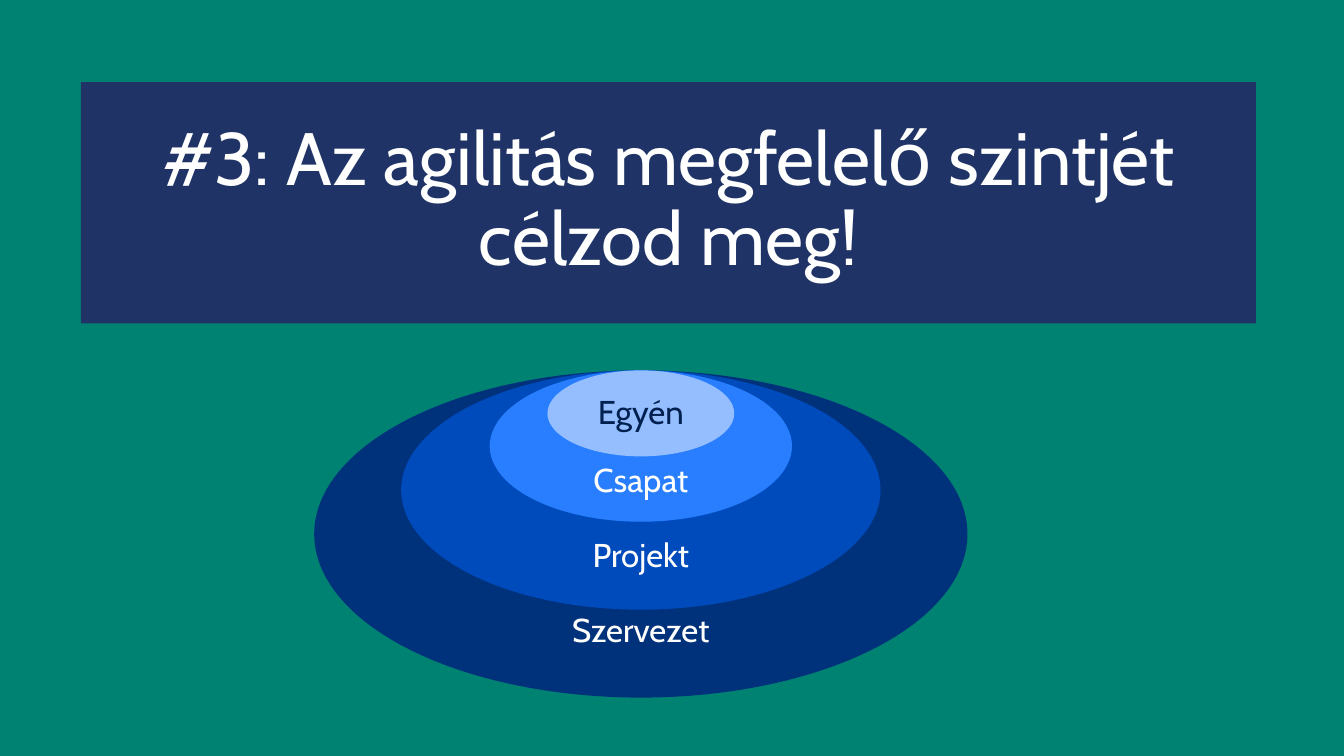
from dataclasses import dataclass

from pptx import Presentation
from pptx import util as u
from pptx.dml.color import RGBColor
from pptx.enum import shapes, text


@dataclass(frozen=True)
class Theme:
    font: str = "Cabin"
    title_size: int = 54
    label_size: int = 24
    background: str = "008272"
    banner: str = "203366"
    light: str = "FFFFFF"
    dark: str = "002050"
    organisation: str = "00317B"
    project: str = "004BBC"
    team: str = "287EFF"
    person: str = "94BEFF"


class SlideBuilder:
    def __init__(self, page, theme):
        self.page = page
        self.theme = theme

    def background(self):
        fill = self.page.background.fill
        fill.solid()
        fill.fore_color.rgb = RGBColor.from_string(self.theme.background)

    def shape(self, kind, bounds, fill, wording, size, color, anchor, top, bottom):
        box = self.page.shapes.add_shape(kind, *map(u.Cm, bounds))
        box.shadow.inherit = False
        box.fill.solid()
        box.fill.fore_color.rgb = RGBColor.from_string(fill)
        box.line.fill.background()
        frame = box.text_frame
        frame.word_wrap = True
        frame.vertical_anchor = anchor
        frame.margin_left = frame.margin_right = u.Cm(0.51)
        frame.margin_top, frame.margin_bottom = u.Cm(top), u.Cm(bottom)
        para = frame.paragraphs[0]
        para.text = wording
        para.alignment = text.PP_ALIGN.CENTER
        para.line_spacing = 0.9
        para.font.name = self.theme.font
        para.font.size = u.Pt(size)
        para.font.color.rgb = RGBColor.from_string(color)
        return box

    def banner(self, bounds, wording):
        box = self.shape(
            shapes.MSO_SHAPE.RECTANGLE, bounds, self.theme.banner, wording,
            self.theme.title_size, self.theme.light, text.MSO_ANCHOR.TOP, 1.02, 1.02,
        )
        box.text_frame.auto_size = text.MSO_AUTO_SIZE.SHAPE_TO_FIT_TEXT

    def level(self, center, top, width, height, fill, wording, color, anchor, margins):
        bounds = (center - width / 2, top, width, height)
        self.shape(
            shapes.MSO_SHAPE.OVAL, bounds, fill, wording,
            self.theme.label_size, color, anchor, *margins,
        )


def main():
    theme = Theme()
    deck = Presentation()
    deck.slide_width, deck.slide_height = u.Cm(34.54), u.Cm(19.43)
    builder = SlideBuilder(deck.slides.add_slide(deck.slide_layouts[6]), theme)
    builder.background()

    bottom, middle = text.MSO_ANCHOR.BOTTOM, text.MSO_ANCHOR.MIDDLE
    levels = [
        (16.79, 8.41, theme.organisation, "Szervezet", theme.light, bottom, (0.51, 0)),
        (12.32, 6.15, theme.project, "Projekt", theme.light, bottom, (1.27, 0)),
        (7.77, 3.89, theme.team, "Csapat", theme.light, bottom, (0.51, 0)),
        (4.8, 2.21, theme.person, "Egyén", theme.dark, middle, (0.41, 0.41)),
    ]
    for level in levels:
        builder.level(16.47, 9.52, *level)

    builder.banner((2.08, 2.11, 30.2, 6.2), "#3: Az agilitás megfelelő szintjét célzod meg!")
    deck.save("out.pptx")


if __name__ == "__main__":
    main()
